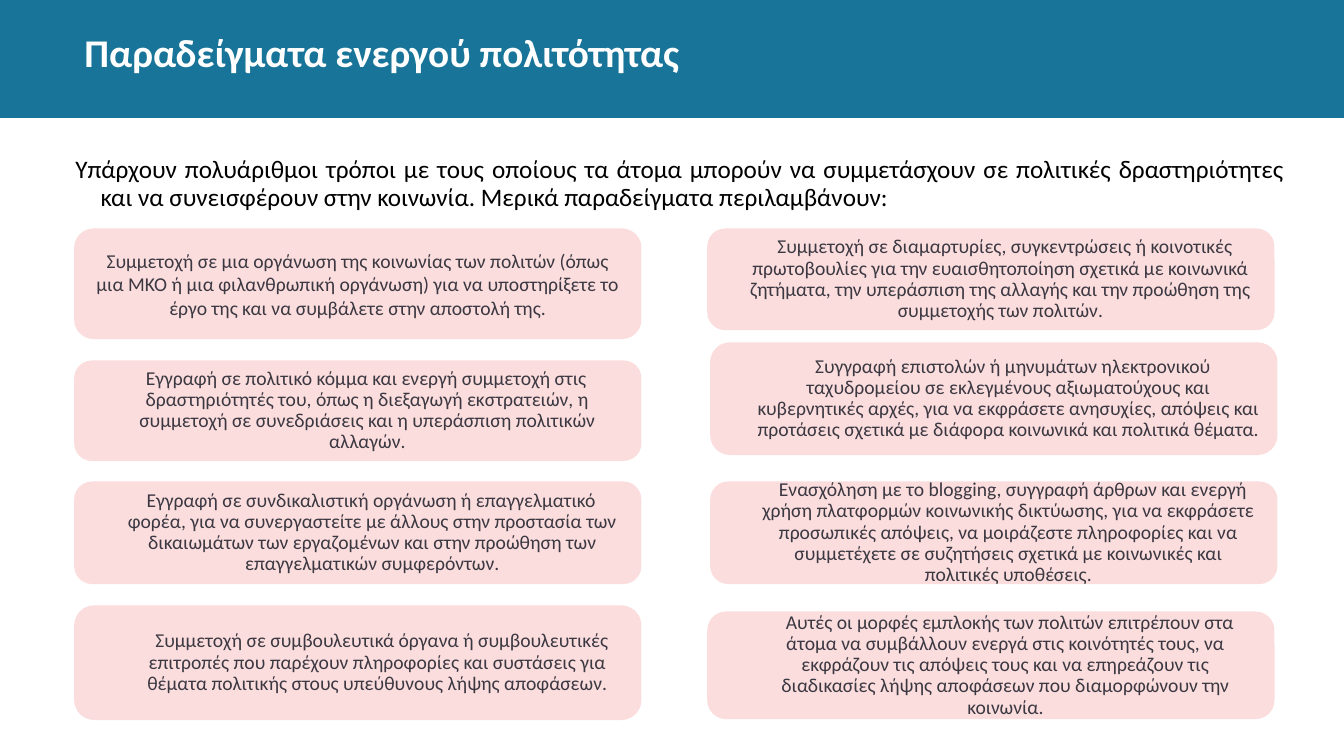
from pptx import Presentation
from pptx.dml.color import RGBColor
from pptx.enum.shapes import MSO_SHAPE
from pptx.enum.text import MSO_ANCHOR, PP_ALIGN
from pptx.util import Pt


def paint(colour_format, colour):
    colour_format.rgb = RGBColor.from_string(colour)


def write(shape, text, size, colour, align, margin, indent, line_spacing=0.9, before=10):
    shape.text_frame.word_wrap = True
    paragraph = shape.text_frame.paragraphs[0]
    paragraph.text = text
    paragraph.alignment = align
    paragraph.line_spacing = line_spacing
    paragraph.space_before = Pt(before)
    paragraph.font.name = "Calibri"
    paragraph.font.size = Pt(size)
    paint(paragraph.font.color, colour)
    properties = paragraph._p.get_or_add_pPr()
    properties.set("marL", str(Pt(margin)))
    properties.set("indent", str(Pt(indent)))
    return paragraph


presentation = Presentation()
presentation.slide_width = Pt(960)
presentation.slide_height = Pt(540)
slide = presentation.slides.add_slide(presentation.slide_layouts[6])
shapes = slide.shapes

banner = shapes.add_shape(MSO_SHAPE.RECTANGLE, Pt(0), Pt(0), Pt(960), Pt(84.2))
banner.shadow.inherit = False
banner.fill.solid()
paint(banner.fill.fore_color, "187498")
banner.line.fill.background()

title = shapes.add_textbox(Pt(35.3), Pt(20.2), Pt(609), Pt(38.2))
heading = write(title, "Παραδείγματα ενεργού πολιτότητας", 28, "FFFFFF",
                PP_ALIGN.LEFT, 36, -18, before=0)
heading.font.bold = True

examples = [
    (54, 164.2, 77, 0, 0, 1, 0,
     "Συμμετοχή σε μια οργάνωση της κοινωνίας των πολιτών (όπως μια ΜΚΟ ή μια "
     "φιλανθρωπική οργάνωση) για να υποστηρίξετε το έργο της και να συμβάλετε "
     "στην αποστολή της."),
    (54, 258.5, 69.8, 13.7, -1.4, 0.9, 10,
     "Εγγραφή σε πολιτικό κόμμα και ενεργή συμμετοχή στις δραστηριότητές του, "
     "όπως η διεξαγωγή εκστρατειών, η συμμετοχή σε συνεδριάσεις και η υπεράσπιση "
     "πολιτικών αλλαγών."),
    (54, 344.9, 71.3, 20.9, -1.4, 0.9, 10,
     "Εγγραφή σε συνδικαλιστική οργάνωση ή επαγγελματικό φορέα, για να "
     "συνεργαστείτε με άλλους στην προστασία των δικαιωμάτων των εργαζομένων και "
     "στην προώθηση των επαγγελματικών συμφερόντων."),
    (54, 433.4, 79.9, 28.1, 6.5, 0.9, 10,
     "Συμμετοχή σε συμβουλευτικά όργανα ή συμβουλευτικές επιτροπές που παρέχουν "
     "πληροφορίες και συστάσεις για θέματα πολιτικής στους υπεύθυνους λήψης "
     "αποφάσεων."),
    (506.2, 164.2, 70.6, 13.7, 6.5, 0.9, 10,
     "Συμμετοχή σε διαμαρτυρίες, συγκεντρώσεις ή κοινοτικές πρωτοβουλίες για την "
     "ευαισθητοποίηση σχετικά με κοινωνικά ζητήματα, την υπεράσπιση της αλλαγής "
     "και την προώθηση της συμμετοχής των πολιτών."),
    (508.3, 245.5, 78.5, 20.9, 6.5, 0.9, 10,
     "Συγγραφή επιστολών ή μηνυμάτων ηλεκτρονικού ταχυδρομείου σε εκλεγμένους "
     "αξιωματούχους και κυβερνητικές αρχές, για να εκφράσετε ανησυχίες, απόψεις "
     "και προτάσεις σχετικά με διάφορα κοινωνικά και πολιτικά θέματα."),
    (508.3, 344.9, 71.3, 20.9, 6.5, 0.9, 10,
     "Ενασχόληση με το blogging, συγγραφή άρθρων και ενεργή χρήση πλατφορμών "
     "κοινωνικής δικτύωσης, για να εκφράσετε προσωπικές απόψεις, να μοιράζεστε "
     "πληροφορίες και να συμμετέχετε σε συζητήσεις σχετικά με κοινωνικές και "
     "πολιτικές υποθέσεις."),
    (506.2, 437.8, 74.9, 20.9, 6.5, 0.9, 10,
     "Αυτές οι μορφές εμπλοκής των πολιτών επιτρέπουν στα άτομα να συμβάλλουν "
     "ενεργά στις κοινότητές τους, να εκφράζουν τις απόψεις τους και να "
     "επηρεάζουν τις διαδικασίες λήψης αποφάσεων που διαμορφώνουν την κοινωνία."),
]
for left, top, height, margin, indent, line_spacing, before, text in examples:
    example = shapes.add_shape(MSO_SHAPE.ROUNDED_RECTANGLE,
                               Pt(left), Pt(top), Pt(403.2), Pt(height))
    example.shadow.inherit = False
    example.fill.solid()
    paint(example.fill.fore_color, "FBDDDD")
    paint(example.line.color, "FBDDDD")
    example.line.width = Pt(2)
    example.text_frame.vertical_anchor = MSO_ANCHOR.MIDDLE
    write(example, text, 14, "3B3842", PP_ALIGN.CENTER, margin, indent, line_spacing, before)

introduction = shapes.add_textbox(Pt(28.8), Pt(108.7), Pt(895.7), Pt(26.6))
write(introduction,
      "Υπάρχουν πολυάριθμοι τρόποι με τους οποίους τα άτομα μπορούν να συμμετάσχουν σε "
      "πολιτικές δραστηριότητες και να συνεισφέρουν στην κοινωνία. Μερικά παραδείγματα "
      "περιλαμβάνουν:", 18, "000000", PP_ALIGN.JUSTIFY, 36, -18)

presentation.save("out.pptx")
